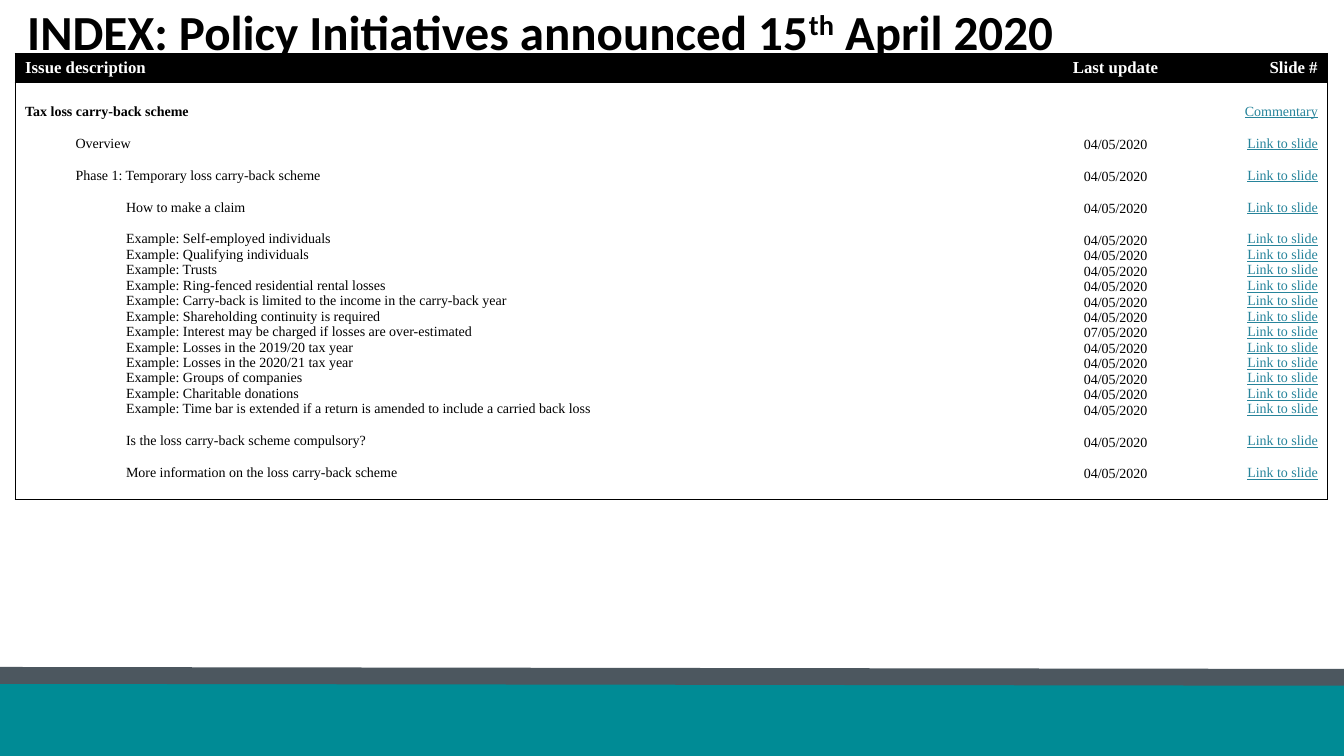
"""Build the index slide of policy initiatives for the tax loss carry-back scheme."""
from lxml import etree
from pptx import Presentation
from pptx.dml.color import RGBColor
from pptx.enum.shapes import MSO_CONNECTOR, MSO_SHAPE
from pptx.enum.text import MSO_ANCHOR, MSO_AUTO_SIZE, PP_ALIGN
from pptx.oxml.ns import qn
from pptx.util import Inches, Pt

BLACK = RGBColor(0x00, 0x00, 0x00)
WHITE = RGBColor(0xFF, 0xFF, 0xFF)
TEAL = RGBColor(0x00, 0x8B, 0x95)
SLATE = RGBColor(0x4C, 0x57, 0x5F)
LINK = RGBColor(0x27, 0x84, 0x9B)
LEFT, CENTER, RIGHT = PP_ALIGN.LEFT, PP_ALIGN.CENTER, PP_ALIGN.RIGHT
MIDDLE, TOP = MSO_ANCHOR.MIDDLE, MSO_ANCHOR.TOP
RECT, STRAIGHT = MSO_SHAPE.RECTANGLE, MSO_CONNECTOR.STRAIGHT
NO_FIT = MSO_AUTO_SIZE.NONE
SERIF = "Times New Roman"
GAP = Pt(11.8)
COLS = [10.07, 1.69, 1.26]
ROWS = [0.29, 4.14]
ALIGNS = [LEFT, CENTER, RIGHT]
HEADS = ["Issue description", "Last update", "Slide #"]
TOPS = [0.21, 0.54, 0.21]
DAY = "04/05/2020"

TOPICS = [
    (0, True, "Tax loss carry-back scheme", None),
    (1, True, "Overview", DAY),
    (1, True, "Phase 1: Temporary loss carry-back scheme", DAY),
    (2, True, "How to make a claim", DAY),
    (2, True, "Example: Self-employed individuals", DAY),
    (2, False, "Example: Qualifying individuals", DAY),
    (2, False, "Example: Trusts", DAY),
    (2, False, "Example: Ring-fenced residential rental losses", DAY),
    (2, False, "Example: Carry-back is limited to the income in the carry-back year", DAY),
    (2, False, "Example: Shareholding continuity is required", DAY),
    (2, False, "Example: Interest may be charged if losses are over-estimated", "07/05/2020"),
    (2, False, "Example: Losses in the 2019/20 tax year", DAY),
    (2, False, "Example: Losses in the 2020/21 tax year", DAY),
    (2, False, "Example: Groups of companies", DAY),
    (2, False, "Example: Charitable donations", DAY),
    (2, False, "Example: Time bar is extended if a return is amended "
               "to include a carried back loss", DAY),
    (2, True, "Is the loss carry-back scheme compulsory?", DAY),
    (2, True, "More information on the loss carry-back scheme", DAY),
]


def write(cell, text, align, size, color, bold=False, gap=False):
    """Add one paragraph to a cell and return it with its run."""
    frame = cell.text_frame
    first = not frame.text
    para = frame.paragraphs[0] if first else frame.add_paragraph()
    para.alignment = align
    if gap and not first:
        para.space_before = GAP
    run = para.add_run()
    run.text = text
    run.font.name, run.font.size, run.font.bold = SERIF, Pt(size), bold
    run.font.color.rgb = color
    return para, run


def border(cell, sides):
    """Draw thin black lines on the given sides and none on the others."""
    props = cell._tc.get_or_add_tcPr()
    for side in "LRTB":
        line = etree.SubElement(props, qn("a:ln" + side), w=str(Pt(0.75)))
        if side in sides:
            fill = etree.SubElement(line, qn("a:solidFill"))
            etree.SubElement(fill, qn("a:srgbClr"), val=str(BLACK))
        else:
            etree.SubElement(line, qn("a:noFill"))


deck = Presentation()
deck.slide_width, deck.slide_height = Inches(13.33), Inches(7.5)
wide = deck.slide_width
slide = deck.slides.add_slide(deck.slide_layouts[5])
shapes = slide.shapes

band = shapes.add_shape(RECT, 0, Inches(6.76), wide, Inches(0.74))
band.shadow.inherit = False
band.fill.solid()
band.fill.fore_color.rgb = TEAL
band.line.fill.background()

rule = shapes.add_connector(STRAIGHT, 0, Inches(6.7), wide, Inches(6.72))
rule.line.color.rgb = SLATE
rule.line.width = Pt(12)
etree.SubElement(rule._element.spPr, qn("a:effectLst"))

title = shapes.title
title.left, title.top = Inches(0.17), 0
title.width, title.height = Inches(13.01), Inches(0.61)
frame = title.text_frame
frame.auto_size = NO_FIT
frame.word_wrap = True
frame.vertical_anchor = MIDDLE
para = frame.paragraphs[0]
para.alignment = LEFT
for text, base in [("INDEX: Policy Initiatives announced 15", 0),
                   ("th", 30000), (" April 2020", 0)]:
    run = para.add_run()
    run.text = text
    run.font.name, run.font.size, run.font.bold = "Calibri", Pt(35), True
    run.font.color.rgb = BLACK
    if base:
        run.font._element.set("baseline", str(base))

table = shapes.add_table(len(ROWS), len(COLS), Inches(0.15), Inches(0.53),
                         Inches(sum(COLS)), Inches(sum(ROWS))).table
table.first_row = table.horz_banding = False
for row, high in zip(table.rows, ROWS):
    row.height = Inches(high)
for col, share in zip(table.columns, COLS):
    col.width = Inches(share)

for c, (head, align) in enumerate(zip(HEADS, ALIGNS)):
    edge = ("L", "", "R")[c]
    cell = table.cell(0, c)
    border(cell, "TB" + edge)
    cell.fill.solid()
    cell.fill.fore_color.rgb = BLACK
    write(cell, head, align, 12, WHITE, bold=True)
    cell = table.cell(1, c)
    border(cell, "TB" + edge)
    cell.fill.background()
    cell.vertical_anchor = TOP
    cell.margin_top = Inches(TOPS[c])

issue, update, jump = (table.cell(1, c) for c in range(3))
for level, gap, text, date in TOPICS:
    para, run = write(issue, text, LEFT, 10, BLACK, level == 0, gap)
    para.level = level
    props = para._p.get_or_add_pPr()
    props.set("marL", str(Inches(level / 2)))
    props.set("indent", "0")
    if date:
        write(update, date, CENTER, 10, BLACK, gap=gap)
    label = "Link to slide" if date else "Commentary"
    para, run = write(jump, label, RIGHT, 10, LINK, gap=gap)
    run.font.underline = True

deck.save("out.pptx")
